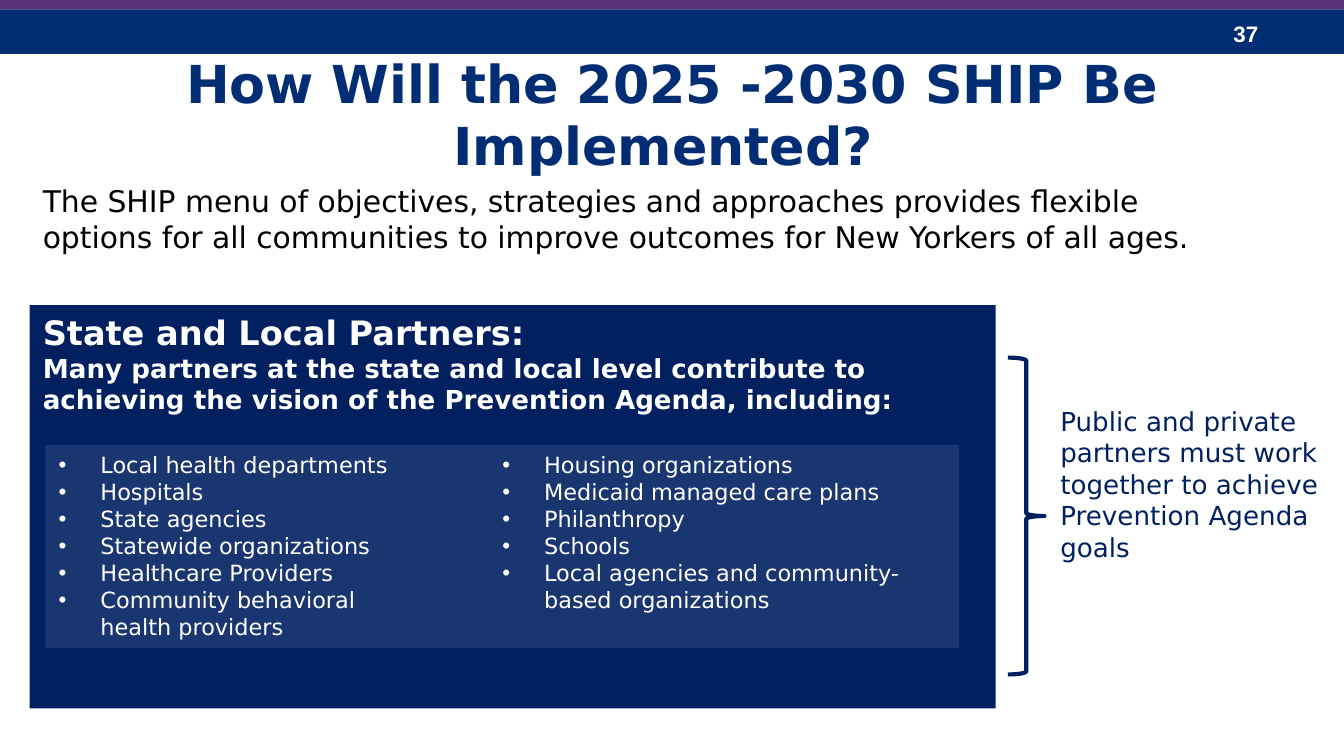
from pptx import Presentation
from pptx import util as u
from pptx.dml.color import RGBColor
from pptx.enum import shapes, text
from pptx.oxml.ns import qn
from lxml import etree

BLUE = RGBColor(0x00, 0x2D, 0x73)
PURPLE = RGBColor(0x55, 0x32, 0x78)
NAVY = RGBColor(0x00, 0x20, 0x60)
WHITE = RGBColor(0xFF, 0xFF, 0xFF)
BLACK = RGBColor(0x00, 0x00, 0x00)
FONT = "DejaVu Sans"
WIDTH, HEIGHT = 25.4, 14.29

PARTNERS = [
    "Local health departments", "Hospitals", "State agencies",
    "Statewide organizations", "Healthcare Providers",
    "Community behavioral\vhealth providers", "Housing organizations",
    "Medicaid managed care plans", "Philanthropy", "Schools",
    "Local agencies and community-based organizations",
]


def cm(box):
    return [u.Cm(v) for v in box]


def add_rect(s, box, fill, alpha=None):
    sp = s.shapes.add_shape(shapes.MSO_SHAPE.RECTANGLE, *cm(box))
    sp.shadow.inherit = False
    sp.fill.solid()
    sp.fill.fore_color.rgb = fill
    sp.line.fill.background()
    if alpha is not None:
        clr = sp.fill._xPr.find(qn("a:solidFill"))[0]
        etree.SubElement(clr, qn("a:alpha"), val=str(alpha * 1000))
    sp.text_frame.vertical_anchor = text.MSO_ANCHOR.TOP
    return sp


def add_box(s, box):
    sp = s.shapes.add_textbox(*cm(box))
    sp.text_frame.word_wrap = True
    return sp


def write(sp, content, size, color, bold=False, font=FONT,
          align=text.PP_ALIGN.LEFT, bullet_indent=None):
    """Add one paragraph, reusing the first one while it is empty."""
    tf = sp.text_frame
    p = tf.paragraphs[0] if not tf.text else tf.add_paragraph()
    p.text = content
    p.alignment = align
    if bullet_indent:
        pPr = p._p.get_or_add_pPr()
        pPr.set("marL", str(u.Cm(bullet_indent)))
        pPr.set("indent", str(-u.Cm(bullet_indent)))
        etree.SubElement(pPr, qn("a:buFont"), typeface="Arial")
        etree.SubElement(pPr, qn("a:buChar"), char="•")
    for r in p.runs:
        r.font.size, r.font.bold, r.font.name = u.Pt(size), bold, font
        r.font.color.rgb = color


def add_header(s, box):
    # Purple strip above the blue bar, with the page number at the right
    x, y, w, h = box
    strip = 0.18
    add_rect(s, (x, y + strip, w, h - strip), BLUE)
    write(add_box(s, (x + w - 2.34, y + 0.25, 1.9, 0.76)), "37", 12, WHITE,
          bold=True, font="Arial")
    add_rect(s, (x, y, w, strip), PURPLE)


def add_title(s, box):
    sp = add_box(s, box)
    sp.text_frame.vertical_anchor = text.MSO_ANCHOR.MIDDLE
    write(sp, "How Will the 2025 -2030 SHIP Be Implemented? ", 28, BLUE,
          bold=True, align=text.PP_ALIGN.CENTER)


def add_intro(s, box):
    write(add_box(s, box),
          "The SHIP menu of objectives, strategies and approaches provides "
          "flexible options for all communities to improve outcomes for "
          "New Yorkers of all ages.", 16, BLACK)


def add_partners(s, box):
    # Navy panel with its heading
    x, y, w, h = box
    panel = add_rect(s, box, NAVY)
    write(panel, "State and Local Partners:", 18, WHITE, bold=True)
    write(panel, "Many partners at the state and local level contribute to "
          "achieving the vision of the Prevention Agenda, including:",
          14, WHITE, bold=True)
    # Two-column list on a translucent block
    block = add_rect(s, (x + 0.3, y + 2.64, w - 0.99, 3.84), WHITE, alpha=10)
    block.text_frame._txBody.bodyPr.set("numCol", "2")
    for partner in PARTNERS:
        write(block, partner, 12, WHITE, bullet_indent=0.79)


def add_conclusion(s, box):
    # Brace with the message at its point
    x, y, w, h = box
    brace = s.shapes.add_shape(shapes.MSO_SHAPE.RIGHT_BRACE,
                               *cm((x, y, 0.69, h)))
    brace.shadow.inherit = False
    brace.fill.background()
    brace.line.color.rgb = NAVY
    brace.line.width = u.Pt(2.25)
    write(add_box(s, (x + 0.74, y + 0.78, w - 0.74, 3.25)),
          "Public and private partners must work together to achieve "
          "Prevention Agenda goals", 14, NAVY)


def main():
    prs = Presentation()
    prs.slide_width, prs.slide_height = u.Cm(WIDTH), u.Cm(HEIGHT)
    s = prs.slides.add_slide(prs.slide_layouts[6])
    add_header(s, (0, 0, WIDTH, 1.02))
    add_title(s, (1.27, 1.17, 22.86, 1.96))
    add_intro(s, (0.56, 3.33, 22.86, 9.42))
    add_partners(s, (0.56, 5.77, 18.26, 7.62))
    add_conclusion(s, (19.05, 6.76, 6.35, 5.99))
    prs.save("out.pptx")


if __name__ == "__main__":
    main()
